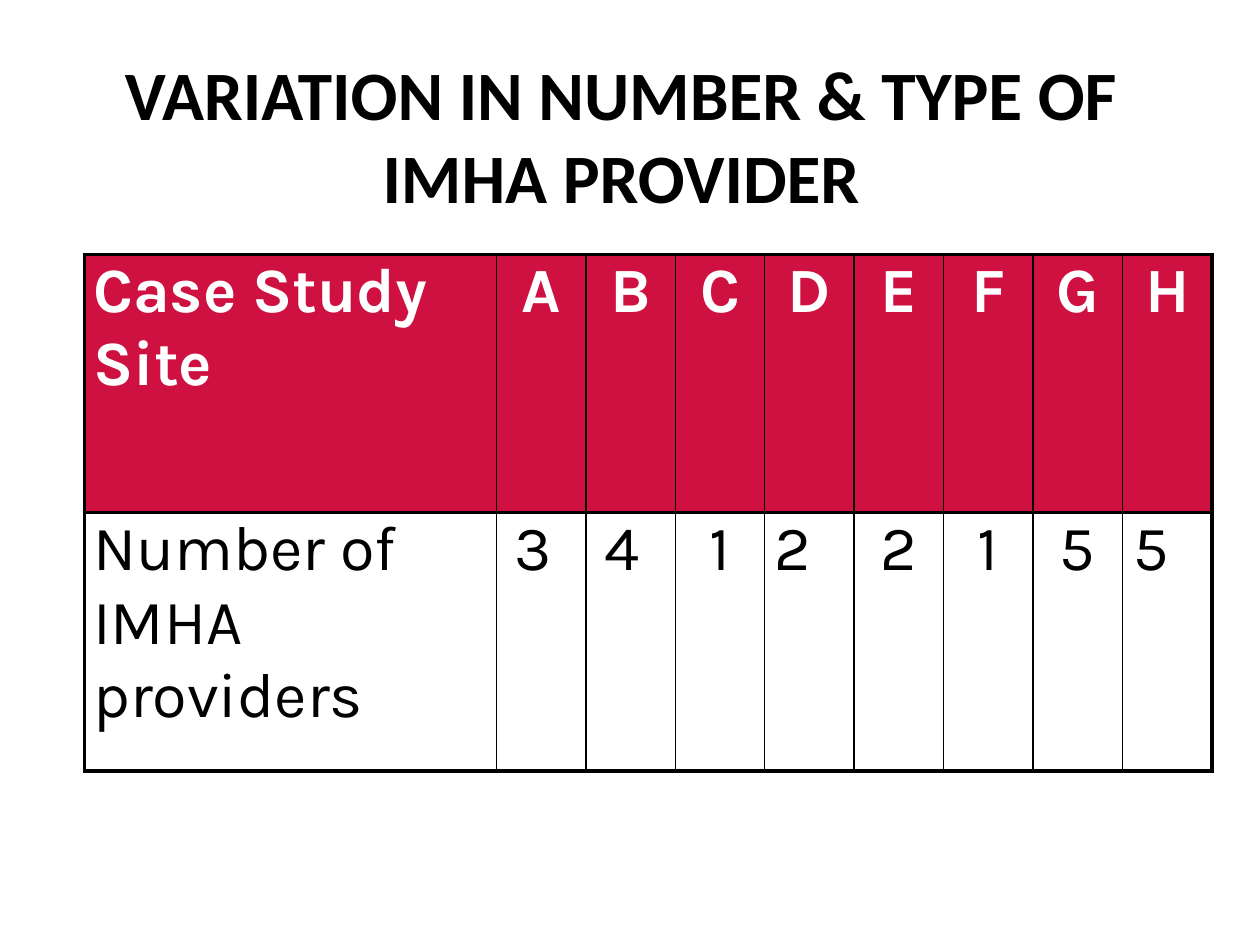
from dataclasses import dataclass

from lxml.etree import SubElement
from pptx import Presentation
from pptx.dml.color import RGBColor
from pptx.enum.text import MSO_ANCHOR, PP_ALIGN
from pptx.oxml.ns import qn
from pptx.slide import Slide
from pptx.util import Inches, Pt

BLACK = RGBColor(0x00, 0x00, 0x00)
WHITE = RGBColor(0xFF, 0xFF, 0xFF)
CRIMSON = RGBColor(0xCE, 0x11, 0x41)

# Site, number of providers, extra right inset that shifts the number left
SITES = [
    ("A", "3", 0.13), ("B", "4", 0.13), ("C", "1", 0), ("D", "2", 0.26),
    ("E", "2", 0), ("F", "1", 0), ("G", "5", 0), ("H", "5", 0.26),
]


@dataclass
class SlideBuilder:
    slide: Slide
    title_font: str = "Calibri"
    table_font: str = "Karla"
    inset: float = 0.07
    thin: float = 1
    thick: float = 2.25

    def add_text(self, frame, text, font, size, color, bold, align):
        paragraph = frame.paragraphs[0]
        paragraph.alignment = align
        run = paragraph.add_run()
        run.text = text
        run.font.name = font
        run.font.size = Pt(size)
        run.font.bold = bold
        run.font.color.rgb = color
        return paragraph

    def title(self, text, left, top, width, height):
        box = self.slide.shapes.add_textbox(
            Inches(left), Inches(top), Inches(width), Inches(height))
        frame = box.text_frame
        frame.word_wrap = True
        frame.vertical_anchor = MSO_ANCHOR.MIDDLE
        self.add_text(frame, text, self.title_font, 39.6, BLACK, True, PP_ALIGN.CENTER)

    def borders(self, cell, first, last):
        properties = cell._tc.get_or_add_tcPr()
        widths = {
            "a:lnL": self.thick if first else self.thin,
            "a:lnR": self.thick if last else self.thin,
            "a:lnT": self.thick,
            "a:lnB": self.thick,
        }
        for position, (tag, width) in enumerate(widths.items()):
            line = SubElement(properties, qn(tag), w=str(Pt(width)))
            fill = SubElement(line, qn("a:solidFill"))
            SubElement(fill, qn("a:srgbClr"), val=str(BLACK))
            properties.insert(position, line)  # borders precede the fill

    def cell(self, cell, text, is_header, first, last, shift):
        if is_header:
            cell.fill.solid()
            cell.fill.fore_color.rgb = CRIMSON
        else:
            cell.fill.background()
        cell.margin_left = Inches(self.inset)
        cell.margin_right = Inches(self.inset + shift)
        cell.margin_top = cell.margin_bottom = 0
        paragraph = self.add_text(
            cell.text_frame, text, self.table_font, 36,
            WHITE if is_header else BLACK, is_header,
            PP_ALIGN.LEFT if first else PP_ALIGN.CENTER)
        paragraph.space_before = Pt(10)
        self.borders(cell, first, last)

    def table(self, rows, shifts, left, top, column_widths, row_height):
        table = self.slide.shapes.add_table(
            len(rows), len(column_widths), Inches(left), Inches(top),
            Inches(sum(column_widths)), Inches(row_height * len(rows))).table
        for column, width in zip(table.columns, column_widths):
            column.width = Inches(width)
        for r, texts in enumerate(rows):
            table.rows[r].height = Inches(row_height)
            for c, text in enumerate(texts):
                self.cell(table.cell(r, c), text, r == 0, c == 0,
                          c == len(texts) - 1, shifts[c] if r else 0)


def main():
    presentation = Presentation()
    presentation.slide_width = Inches(10)
    presentation.slide_height = Inches(7.5)
    builder = SlideBuilder(presentation.slides.add_slide(presentation.slide_layouts[6]))

    # Heading
    builder.title("VARIATION IN NUMBER & TYPE OF IMHA PROVIDER", 0.43, 0.44, 9, 1.25)

    # Providers per case study site
    names, counts, shifts = zip(*SITES)
    builder.table(
        [("Case Study Site", *names), ("Number of IMHA providers", *counts)],
        (0, *shifts), 0.67, 2.02, [3.27] + [0.71] * len(SITES), 2.05)

    presentation.save("out.pptx")


if __name__ == "__main__":
    main()
